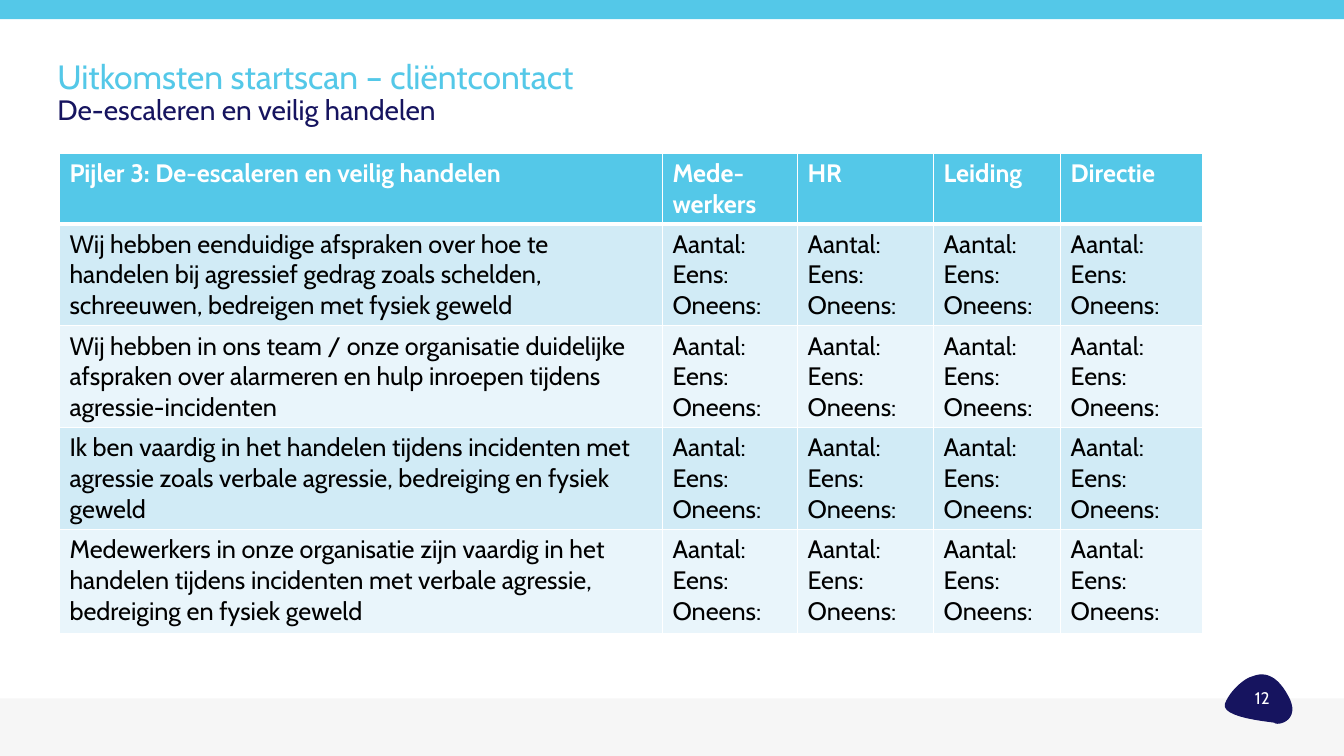
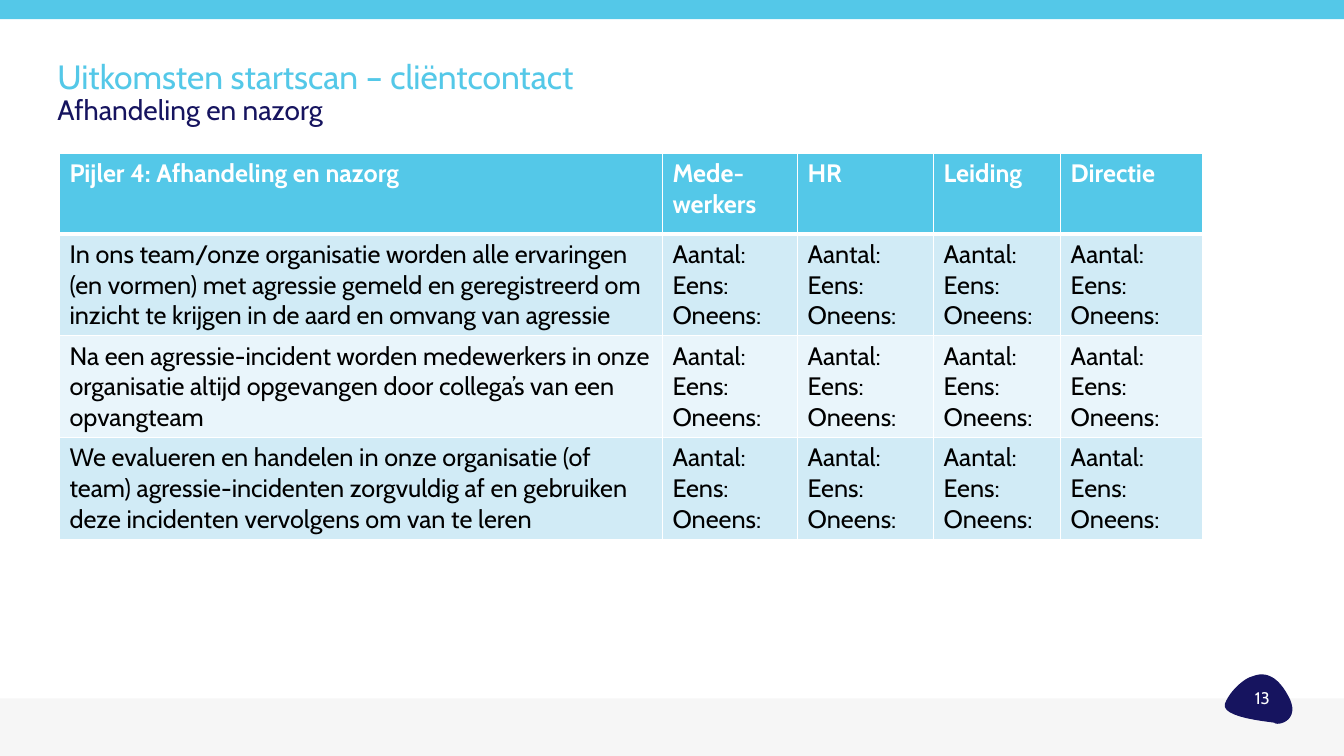
from dataclasses import dataclass

from lxml.etree import SubElement
from pptx import Presentation
from pptx.dml.color import RGBColor
from pptx.enum.shapes import MSO_SHAPE
from pptx.enum.text import MSO_ANCHOR, PP_ALIGN
from pptx.oxml.ns import qn
from pptx.util import Pt

PX = 9144  # EMU per px, 100 px to the inch
WIDTH, HEIGHT = 1333, 750


@dataclass(frozen=True)
class Theme:
    font: str = "Cabin"
    sky: str = "54C8E8"
    navy: str = "16145F"
    footer: str = "F6F6F6"
    white: str = "FFFFFF"
    black: str = "000000"
    bands: tuple = ("D1EBF6", "E9F5FB")
    title: int = 24
    subtitle: int = 20
    body: int = 18
    number: int = 12


T = Theme()

# Shared geometry and wording
BARS = [(0, 693, WIDTH, 57, T.footer), (0, 0, WIDTH, 19, T.sky)]
BLOB_START = (1251, 669)
BLOB_CURVES = [
    ((1248, 669), (1245, 670), (1242, 671)),
    ((1234, 673), (1220, 685), (1215, 698)),
    ((1210, 712), (1260, 716), (1264, 717)),
    ((1265, 718), (1266, 718), (1267, 718)),
    ((1276, 718), (1289, 709), (1277, 689)),
    ((1268, 673), (1259, 669), (1251, 669)),
]
CURVE_STEPS = 12
COLUMNS = [598, 134, 135, 126, 141]
ROLES = ["Mede-\nwerkers", "HR", "Leiding", "Directie"]
ANSWERS = ["Aantal:\nEens:\nOneens:"] * len(ROLES)
TITLE = "Uitkomsten startscan – cliëntcontact"

# Slide number, pillar, theme, row heights, statements
SLIDES = [
    (12, 3, "De-escaleren en veilig handelen", [70, 101, 101, 101, 104], [
        "Wij hebben eenduidige afspraken over hoe te handelen bij agressief "
        "gedrag zoals schelden, schreeuwen, bedreigen met fysiek geweld",
        "Wij hebben in ons team / onze organisatie duidelijke afspraken over "
        "alarmeren en hulp inroepen tijdens agressie-incidenten",
        "Ik ben vaardig in het handelen tijdens incidenten met agressie zoals "
        "verbale agressie, bedreiging en fysiek geweld",
        "Medewerkers in onze organisatie zijn vaardig in het handelen tijdens "
        "incidenten met verbale agressie, bedreiging en fysiek geweld",
    ]),
    (13, 4, "Afhandeling en nazorg", [80, 101, 101, 101], [
        "In ons team/onze organisatie worden alle ervaringen (en vormen) met "
        "agressie gemeld en geregistreerd om inzicht te krijgen in de aard en "
        "omvang van agressie",
        "Na een agressie-incident worden medewerkers in onze organisatie "
        "altijd opgevangen door collega’s van een opvangteam",
        "We evalueren en handelen in onze organisatie (of team) "
        "agressie-incidenten zorgvuldig af en gebruiken deze incidenten "
        "vervolgens om van te leren",
    ]),
]


def write(p, text, size=T.body, color=T.black, bold=False):
    r = p.add_run()
    r.text = text
    r.font.name = T.font
    r.font.size = Pt(size)
    r.font.bold = bold
    r.font.color.rgb = RGBColor.from_string(color)


def text_frame(s, *box):
    tf = s.shapes.add_textbox(*(v * PX for v in box)).text_frame
    tf.word_wrap = True
    tf.vertical_anchor = MSO_ANCHOR.MIDDLE
    tf.margin_left = tf.margin_top = tf.margin_right = tf.margin_bottom = 0
    return tf


prs = Presentation()
prs.slide_width, prs.slide_height = WIDTH * PX, HEIGHT * PX

for number, pillar, topic, heights, statements in SLIDES:
    s = prs.slides.add_slide(prs.slide_layouts[6])

    # Footer and top band
    parts = []
    for *box, color in BARS:
        sp = s.shapes.add_shape(MSO_SHAPE.RECTANGLE, *(v * PX for v in box))
        parts.append((sp, color))

    # Rounded number badge, its Bézier curves sampled into short segments
    points, start = [], BLOB_START
    for c1, c2, end in BLOB_CURVES:
        for step in range(1, CURVE_STEPS + 1):
            t = step / CURVE_STEPS
            u = 1 - t
            points.append(tuple(
                (u**3 * a + 3 * u**2 * t * b + 3 * u * t**2 * c + t**3 * d) * PX
                for a, b, c, d in zip(start, c1, c2, end)))
        start = end
    builder = s.shapes.build_freeform(*(v * PX for v in BLOB_START))
    builder.add_line_segments(points, close=True)
    parts.append((builder.convert_to_shape(), T.navy))

    for sp, color in parts:
        sp.shadow.inherit = False
        sp.fill.solid()
        sp.fill.fore_color.rgb = RGBColor.from_string(color)
        sp.line.fill.background()

    # Slide number
    p = text_frame(s, 1228, 672, 48, 41).paragraphs[0]
    p.alignment = PP_ALIGN.CENTER
    write(p, str(number), size=T.number, color=T.white)

    # Results table
    rows = [[f"Pijler {pillar}: {topic}", *ROLES]]
    rows += [[statement, *ANSWERS] for statement in statements]
    table = s.shapes.add_table(
        len(rows), len(COLUMNS), 59 * PX, 152 * PX,
        sum(COLUMNS) * PX, sum(heights) * PX).table
    for column, width in zip(table.columns, COLUMNS):
        column.width = width * PX
    for i, (texts, height) in enumerate(zip(rows, heights)):
        table.rows[i].height = height * PX
        header = i == 0
        fill = T.sky if header else T.bands[(i - 1) % 2]
        borders = {"L": 1, "R": 1, "T": 3 if i == 1 else 1, "B": 3 if header else 1}
        for cell, text in zip(table.rows[i].cells, texts):
            tcPr = cell._tc.get_or_add_tcPr()
            for side, width in borders.items():
                ln = SubElement(tcPr, qn(f"a:ln{side}"), w=str(Pt(width)))
                SubElement(SubElement(ln, qn("a:solidFill")),
                           qn("a:srgbClr"), val=T.white)
            cell.fill.solid()
            cell.fill.fore_color.rgb = RGBColor.from_string(fill)
            tf = cell.text_frame
            for j, line in enumerate(text.split("\n")):
                p = tf.add_paragraph() if j else tf.paragraphs[0]
                write(p, line, color=T.white if header else T.black, bold=header)

    # Title and subtitle
    p = text_frame(s, 57, 52, 1217, 81).paragraphs[0]
    p.line_spacing = 0.9
    write(p, TITLE, size=T.title, color=T.sky)
    p.add_line_break()
    write(p, topic, size=T.subtitle, color=T.navy)

prs.save("out.pptx")
